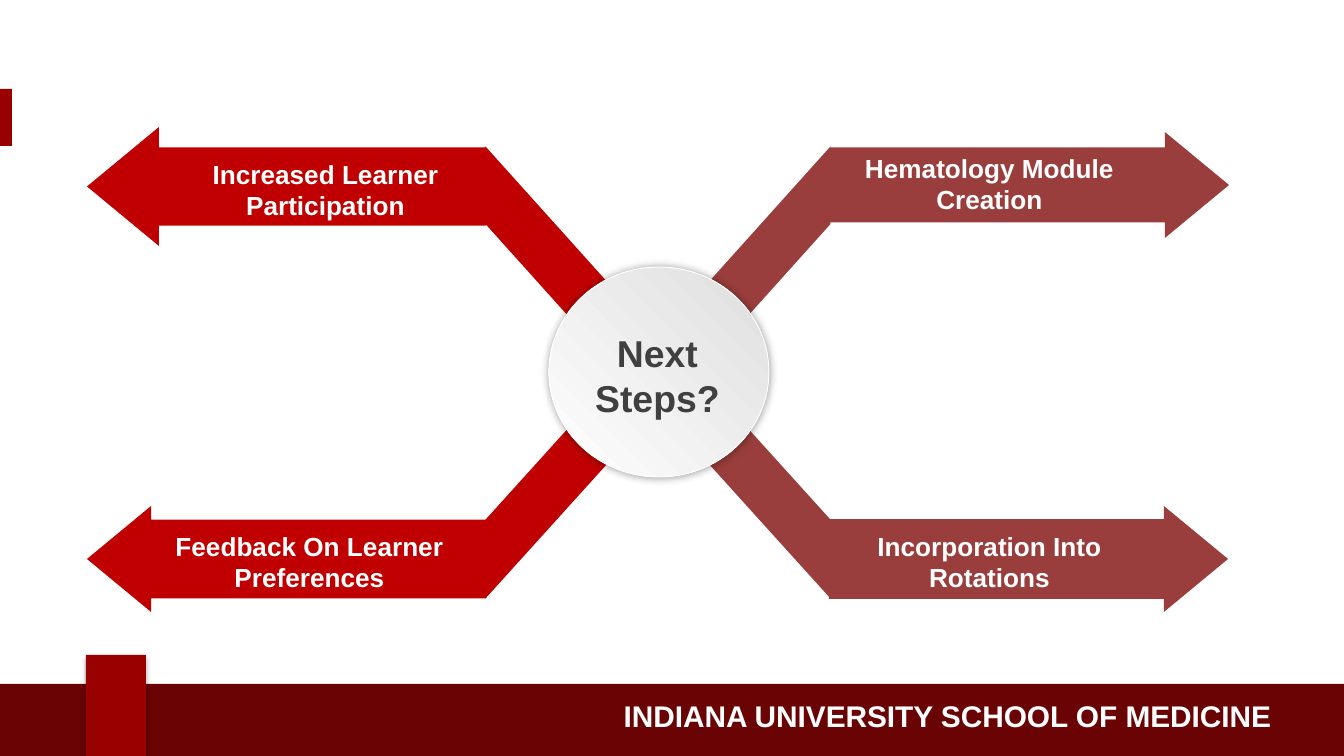
"""Build the Next Steps slide: four arrows leading out of a central hub."""
from dataclasses import dataclass
from typing import NamedTuple

from lxml.etree import SubElement
from pptx import Presentation
from pptx.dml.color import RGBColor
from pptx.enum.shapes import MSO_SHAPE
from pptx.enum.text import MSO_ANCHOR, MSO_AUTO_SIZE, PP_ALIGN
from pptx.oxml.ns import qn
from pptx.util import Emu, Pt

EMU_PER_PX = 914400 / 134.4


@dataclass(frozen=True)
class Theme:
    """Colours, font and type sizes of the slide."""
    font: str = "Arial"
    crimson: str = "990000"
    maroon: str = "690304"
    red: str = "C00000"
    brick: str = "993E3C"
    white: str = "FFFFFF"
    silver: str = "DEDEDE"
    charcoal: str = "404040"
    label_size: int = 14
    banner_size: int = 16
    hub_size: int = 20


class Box(NamedTuple):
    """Left, top, width and height in px."""
    x: int
    y: int
    w: int
    h: int


class Step(NamedTuple):
    """One labelled arrow and the arm that joins it to the hub."""
    text: str
    label: Box
    arrow: Box
    kind: MSO_SHAPE
    shaft: float
    arm: Box
    slant: float
    rising: bool
    color: str


class Shadow(NamedTuple):
    """Black outer shadow: opacity in percent, lengths in points, angle in degrees."""
    opacity: int
    blur: float
    distance: float
    angle: int


THEME = Theme()
LABEL_W, LABEL_H = 347, 77
ARROW_W, ARROW_H = 399, 106
ARM_W, ARM_H = 269, 172
LEFT_ARM, RIGHT_ARM, TOP_ARM, BOTTOM_ARM = 437, 610, 195, 378
HEAD = 0.605

STEPS = [
    Step("Hematology Module Creation", Box(816, 145, LABEL_W, LABEL_H),
         Box(830, 132, ARROW_W, ARROW_H), MSO_SHAPE.RIGHT_ARROW, 0.708,
         Box(RIGHT_ARM, TOP_ARM, ARM_W, ARM_H), 1.113, True, THEME.brick),
    Step("Incorporation Into Rotations", Box(816, 523, LABEL_W, LABEL_H),
         Box(829, 506, ARROW_W, ARROW_H), MSO_SHAPE.RIGHT_ARROW, 0.752,
         Box(RIGHT_ARM, BOTTOM_ARM, ARM_W, ARM_H), 1.106, False, THEME.brick),
    Step("Increased Learner Participation", Box(152, 151, LABEL_W, LABEL_H),
         Box(87, 127, ARROW_W, 119), MSO_SHAPE.LEFT_ARROW, 0.656,
         Box(LEFT_ARM, TOP_ARM, ARM_W, ARM_H), 1.113, False, THEME.red),
    Step("Feedback On Learner Preferences", Box(136, 523, LABEL_W, LABEL_H),
         Box(87, 506, ARROW_W, ARROW_H), MSO_SHAPE.LEFT_ARROW, 0.743,
         Box(LEFT_ARM, BOTTOM_ARM, ARM_W, ARM_H), 1.106, True, THEME.red),
]


def px(n: int) -> Emu:
    """Turn px into EMU."""
    return Emu(round(n * EMU_PER_PX))


def rgb(color: str) -> RGBColor:
    """Turn a hex string into a colour."""
    return RGBColor.from_string(color)


def add_shape(s, kind: MSO_SHAPE, box: Box, color: str, adj: tuple = ()):
    """Draw a flat preset shape without outline or shadow."""
    sp = s.shapes.add_shape(kind, *map(px, box))
    for i, value in enumerate(adj):
        sp.adjustments[i] = value
    sp.fill.solid()
    sp.fill.fore_color.rgb = rgb(color)
    sp.line.fill.background()
    sp.shadow.inherit = False
    return sp


def add_shadow(sp, shadow: Shadow) -> None:
    """Give a shape an outer shadow."""
    effects = sp.element.spPr.find(qn("a:effectLst"))
    outer = SubElement(effects, qn("a:outerShdw"), blurRad=str(Pt(shadow.blur)),
                       dist=str(Pt(shadow.distance)), dir=str(shadow.angle * 60000),
                       algn="ctr", rotWithShape="0")
    color = SubElement(outer, qn("a:srgbClr"), val="000000")
    SubElement(color, qn("a:alpha"), val=str(shadow.opacity * 1000))


def set_text(sp, text: str, size: int, color: str, align: PP_ALIGN,
             anchor: MSO_ANCHOR = MSO_ANCHOR.TOP, inset: int = 13) -> None:
    """Fill a text shape with one bold wrapped paragraph."""
    tf = sp.text_frame
    tf.text = text
    tf.word_wrap = True
    tf.auto_size = MSO_AUTO_SIZE.NONE
    tf.vertical_anchor = anchor
    tf.margin_left = tf.margin_right = px(inset)
    tf.margin_top = tf.margin_bottom = px(7)
    p = tf.paragraphs[0]
    p.alignment = align
    font = p.runs[0].font
    font.name, font.size, font.bold = THEME.font, Pt(size), True
    font.color.rgb = rgb(color)


def add_frame(s) -> None:
    """Draw the side mark, the bottom banner and its tab."""
    add_shape(s, MSO_SHAPE.RECTANGLE, Box(0, 89, 12, 57), THEME.crimson)
    add_shape(s, MSO_SHAPE.RECTANGLE, Box(0, 684, 1344, 72), THEME.maroon)
    sp = s.shapes.add_textbox(*map(px, Box(379, 691, 906, 50)))
    set_text(sp, "INDIANA UNIVERSITY SCHOOL OF MEDICINE", THEME.banner_size,
             THEME.white, PP_ALIGN.RIGHT, MSO_ANCHOR.MIDDLE)
    tab = add_shape(s, MSO_SHAPE.RECTANGLE, Box(86, 655, 60, 101), THEME.crimson)
    add_shadow(tab, Shadow(35, 3.1, 1.8, 90))


def add_step(s, step: Step) -> None:
    """Draw one arrow, its arm and its label."""
    add_shape(s, step.kind, step.arrow, step.color, (step.shaft, HEAD))
    arm = add_shape(s, MSO_SHAPE.PARALLELOGRAM, step.arm, step.color, (step.slant,))
    arm.rotation = 90
    if step.rising:
        arm.element.spPr.find(qn("a:xfrm")).set("flipH", "1")
    sp = s.shapes.add_textbox(*map(px, step.label))
    set_text(sp, step.text, THEME.label_size, THEME.white, PP_ALIGN.CENTER, inset=16)


def add_hub(s) -> None:
    """Draw the central disc and put the title on it."""
    hub = add_shape(s, MSO_SHAPE.OVAL, Box(549, 267, 220, 210), THEME.silver)
    hub.fill.gradient()
    hub.fill.gradient_angle = 225
    for stop, color in zip(hub.fill.gradient_stops, (THEME.silver, THEME.white)):
        stop.color.rgb = rgb(color)
    hub.line.color.rgb = rgb(THEME.white)
    hub.line.width = Pt(0.5)
    add_shadow(hub, Shadow(40, 5, 0, 0))
    title = s.shapes.title
    title.left, title.top, title.width, title.height = map(px, Box(572, 323, 171, 81))
    set_text(title, "Next Steps?", THEME.hub_size, THEME.charcoal, PP_ALIGN.CENTER)
    s.shapes.element.append(title.element)


def main() -> None:
    """Build and save the presentation."""
    prs = Presentation()
    prs.slide_width, prs.slide_height = px(1344), px(756)
    s = prs.slides.add_slide(prs.slide_layouts[5])
    add_frame(s)
    for step in STEPS:
        add_step(s, step)
    add_hub(s)
    prs.save("out.pptx")


if __name__ == "__main__":
    main()
